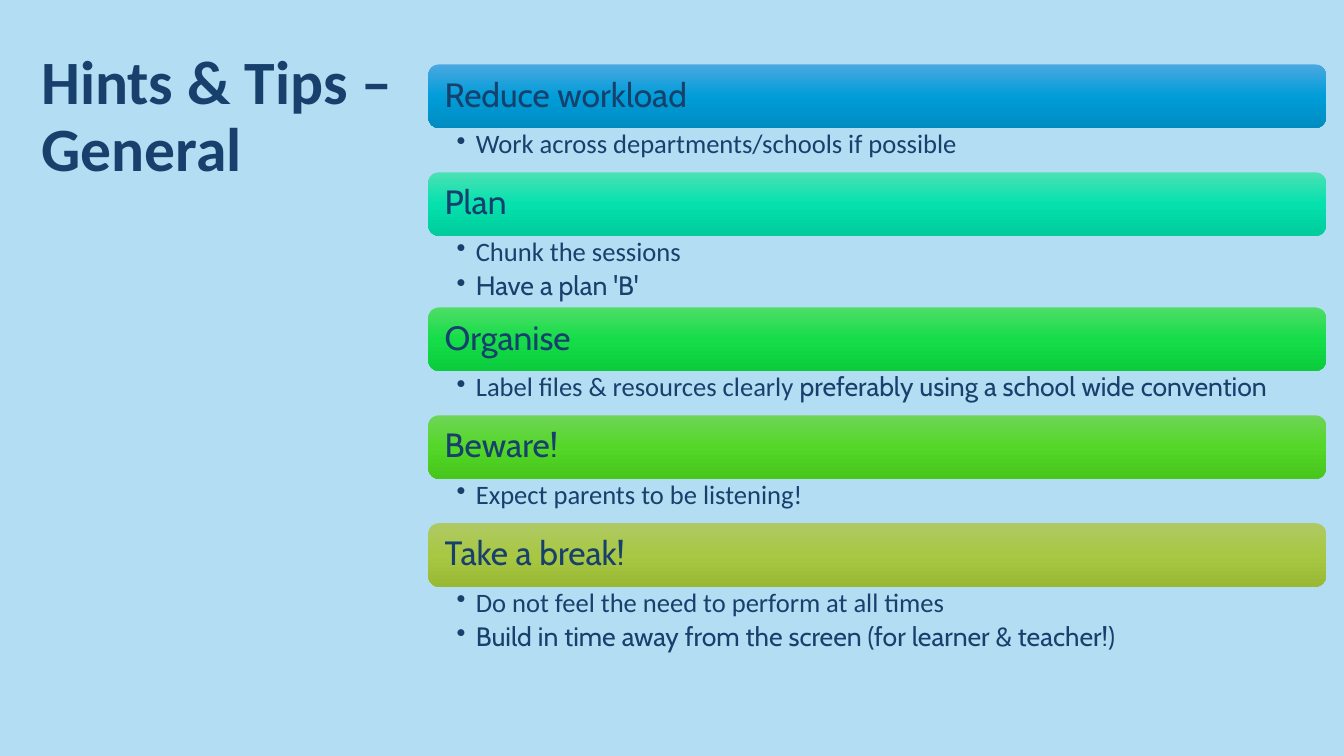
from copy import deepcopy

from lxml.etree import SubElement
from pptx import Presentation
from pptx.dml.color import RGBColor
from pptx.enum.shapes import MSO_SHAPE
from pptx.enum.text import MSO_ANCHOR, PP_ALIGN
from pptx.oxml.ns import qn
from pptx.util import Inches, Pt

NAVY = RGBColor(0x17, 0x40, 0x6D)
PALE_BLUE = RGBColor(0xB3, 0xDD, 0xF2)
BLUES = [RGBColor(0x4B, 0xA8, 0xE0), RGBColor(0x00, 0x9D, 0xD9), RGBColor(0x00, 0x8C, 0xC1)]
TEALS = [RGBColor(0x4B, 0xE1, 0xB4), RGBColor(0x04, 0xE1, 0xAE), RGBColor(0x00, 0xCC, 0x9C)]
GREENS = [RGBColor(0x4E, 0xDD, 0x66), RGBColor(0x15, 0xDD, 0x49), RGBColor(0x0B, 0xCC, 0x3D)]
LIMES = [RGBColor(0x6E, 0xD5, 0x56), RGBColor(0x54, 0xD7, 0x28), RGBColor(0x47, 0xC6, 0x1C)]
OLIVES = [RGBColor(0xAF, 0xC9, 0x64), RGBColor(0xA8, 0xC8, 0x43), RGBColor(0x99, 0xB9, 0x35)]

# Each tip: heading, bar gradient, list height in rows, bullets as (text, font) runs
TIPS = [
    ("Reduce workload", BLUES, 5.87,
     [[("Work across departments/schools if possible", "Calibri")]]),
    ("Plan", TEALS, 9.47,
     [[("Chunk the sessions", "Calibri")], [("Have a plan 'B'", "Cabin")]]),
    ("Organise", GREENS, 5.87,
     [[("Label files & resources clearly", "Calibri"),
       (" preferably using a school wide convention", "Cabin")]]),
    ("Beware!", LIMES, 5.87,
     [[("Expect parents to be listening!", "Calibri")]]),
    ("Take a break!", OLIVES, 14.13,
     [[("Do not feel the need to perform at all times", "Calibri")],
      [("Build in time away from the screen (for learner & teacher!)", "Cabin")]]),
]

presentation = Presentation()
presentation.slide_width, presentation.slide_height = Inches(13.33), Inches(7.5)
slide = presentation.slides.add_slide(presentation.slide_layouts[6])
slide.background.fill.solid()
slide.background.fill.fore_color.rgb = PALE_BLUE

# Grid of 100 columns by 100 rows
COLUMN = presentation.slide_width / 100
ROW = presentation.slide_height / 100
LIST_LEFT, LIST_WIDTH = 31.88, 66.77
FIRST_TOP, BAR_HEIGHT = 8.53, 8.4


def place(left, top, width, height):
    return int(left * COLUMN), int(top * ROW), int(width * COLUMN), int(height * ROW)


def style(paragraph, size):
    paragraph.alignment = PP_ALIGN.LEFT
    paragraph.line_spacing = 0.9
    paragraph.font.size = Pt(size)
    paragraph.font.color.rgb = NAVY


# Title
title = slide.shapes.add_textbox(*place(2.33, -14.27, 29.11, 59.73))
title.text_frame.word_wrap = True
title.text_frame.vertical_anchor = MSO_ANCHOR.MIDDLE
paragraph = title.text_frame.paragraphs[0]
paragraph.text = "Hints & Tips – General"
style(paragraph, 44)
paragraph.font.name = "Calibri"
paragraph.font.bold = True

top = FIRST_TOP
for heading, gradient, list_height, bullets in TIPS:
    # Heading bar with a three-stop vertical gradient
    bar = slide.shapes.add_shape(
        MSO_SHAPE.ROUNDED_RECTANGLE, *place(LIST_LEFT, top, LIST_WIDTH, BAR_HEIGHT))
    bar.shadow.inherit = False
    bar.line.fill.background()
    bar.fill.gradient()
    bar.fill.gradient_angle = 270
    stop_list = bar.element.spPr.find(qn("a:gradFill")).find(qn("a:gsLst"))
    stop_list.append(deepcopy(stop_list[-1]))
    for stop, color, position in zip(bar.fill.gradient_stops, gradient, (0, 0.5, 1)):
        stop.color.rgb = color
        stop.position = position
    bar.text_frame.margin_left = Inches(0.13)
    bar.text_frame.vertical_anchor = MSO_ANCHOR.MIDDLE
    paragraph = bar.text_frame.paragraphs[0]
    paragraph.text = heading
    style(paragraph, 24)
    paragraph.font.name = "Cabin"
    top += BAR_HEIGHT

    # Bullets below the bar
    bullet_box = slide.shapes.add_textbox(*place(LIST_LEFT, top, LIST_WIDTH, list_height))
    frame = bullet_box.text_frame
    frame.word_wrap = True
    frame.margin_left, frame.margin_right = Inches(0.28), Inches(0.19)
    frame.margin_top = frame.margin_bottom = Inches(0.03)
    for index, runs in enumerate(bullets):
        paragraph = frame.add_paragraph() if index else frame.paragraphs[0]
        style(paragraph, 19)
        paragraph.space_after = Pt(3.8)
        paragraph.level = 1
        properties = paragraph._p.get_or_add_pPr()
        properties.set("marL", str(Inches(0.19)))
        properties.set("indent", str(-Inches(0.19)))
        bullet = SubElement(properties, qn("a:buChar"), char="•")
        properties.find(qn("a:defRPr")).addprevious(bullet)
        for text, font_name in runs:
            run = paragraph.add_run()
            run.text = text
            run.font.name = font_name
    top += list_height

presentation.save("out.pptx")
